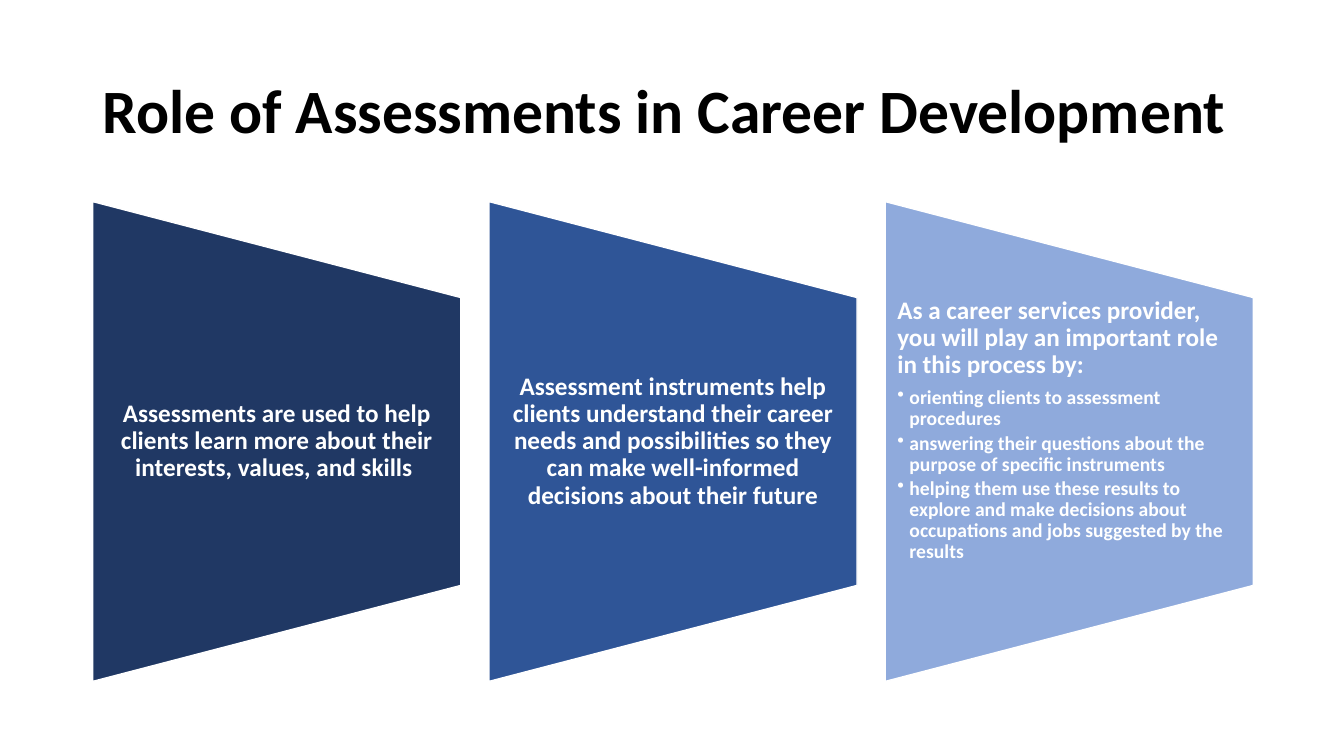
from lxml import etree
from pptx import Presentation
from pptx.dml.color import RGBColor
from pptx.enum.shapes import MSO_SHAPE
from pptx.enum.text import MSO_ANCHOR, PP_ALIGN
from pptx.oxml.ns import qn
from pptx.util import Inches, Pt

BLACK = RGBColor(0x00, 0x00, 0x00)
WHITE = RGBColor(0xFF, 0xFF, 0xFF)
NAVY = RGBColor(0x20, 0x38, 0x64)
BLUE = RGBColor(0x2F, 0x55, 0x97)
LIGHT_BLUE = RGBColor(0x8F, 0xAA, 0xDC)

MARGIN = 0.92
PANEL_WIDTH = 3.65
PANEL_HEIGHT = 4.76
PANEL_GAP = 0.28
PANEL_MIDDLE = 4.38
TEXT_HEIGHT = 2.86

PANELS = [
    (NAVY, "Assessments are used to help clients learn more about their interests, values, and skills ", []),
    (BLUE, "Assessment instruments help clients understand their career needs and possibilities "
           "so they can make well-informed decisions about their future", []),
    (LIGHT_BLUE, "As a career services provider, you will play an important role in this process by:", [
        "orienting clients to assessment procedures ",
        "answering their questions about the purpose of specific instruments ",
        "helping them use these results to explore and make decisions about "
        "occupations and jobs suggested by the results",
    ]),
]


class SlideBuilder:
    font_name = "Calibri"
    line_spacing = 0.9

    def __init__(self, presentation):
        self.slide = presentation.slides.add_slide(presentation.slide_layouts[6])

    def text_frame(self, left, top, width, height, anchor, inset_x, inset_y):
        box = self.slide.shapes.add_textbox(Inches(left), Inches(top), Inches(width), Inches(height))
        frame = box.text_frame
        frame.word_wrap = True
        frame.vertical_anchor = anchor
        frame.margin_left = frame.margin_right = Inches(inset_x)
        frame.margin_top = frame.margin_bottom = Inches(inset_y)
        return frame

    def fill_paragraph(self, paragraph, text, size, color, alignment=PP_ALIGN.LEFT, space_after=0):
        paragraph.alignment = alignment
        paragraph.line_spacing = self.line_spacing
        paragraph.space_after = Pt(space_after)
        run = paragraph.add_run()
        run.text = text
        run.font.name = self.font_name
        run.font.size = Pt(size)
        run.font.bold = True
        run.font.color.rgb = color

    def title(self, text):
        frame = self.text_frame(MARGIN, 0.4, 11.5, 1.45, MSO_ANCHOR.MIDDLE, 0.1, 0.05)
        self.fill_paragraph(frame.paragraphs[0], text, 44, BLACK)

    def bullet(self, frame, text):
        paragraph = frame.add_paragraph()
        paragraph.level = 1
        self.fill_paragraph(paragraph, text, 14, WHITE, space_after=2.1)
        properties = paragraph._p.get_or_add_pPr()
        properties.set("marL", str(Inches(0.12)))
        properties.set("indent", str(-Inches(0.12)))
        etree.SubElement(properties, qn("a:buChar")).set("char", "•")

    def trapezoid(self, left, color):
        shape = self.slide.shapes.add_shape(
            MSO_SHAPE.FLOWCHART_MANUAL_OPERATION,
            Inches(left + (PANEL_WIDTH - PANEL_HEIGHT) / 2), Inches(PANEL_MIDDLE - PANEL_WIDTH / 2),
            Inches(PANEL_HEIGHT), Inches(PANEL_WIDTH))
        shape.rotation = 270
        shape.shadow.inherit = False
        shape.fill.solid()
        shape.fill.fore_color.rgb = color
        shape.line.color.rgb = WHITE
        shape.line.width = Pt(1)

    def panel(self, left, color, text, bullets):
        self.trapezoid(left, color)
        anchor = MSO_ANCHOR.TOP if bullets else MSO_ANCHOR.MIDDLE
        alignment = PP_ALIGN.LEFT if bullets else PP_ALIGN.CENTER
        frame = self.text_frame(left, PANEL_MIDDLE - TEXT_HEIGHT / 2, PANEL_WIDTH, TEXT_HEIGHT, anchor, 0.12, 0)
        self.fill_paragraph(frame.paragraphs[0], text, 18, WHITE, alignment, space_after=6.3)
        for item in bullets:
            self.bullet(frame, item)


def main():
    presentation = Presentation()
    presentation.slide_width = Inches(13.33)
    presentation.slide_height = Inches(7.5)
    builder = SlideBuilder(presentation)
    builder.title("Role of Assessments in Career Development")
    for index, (color, text, bullets) in enumerate(PANELS):
        builder.panel(MARGIN + index * (PANEL_WIDTH + PANEL_GAP), color, text, bullets)
    presentation.save("out.pptx")


if __name__ == "__main__":
    main()
